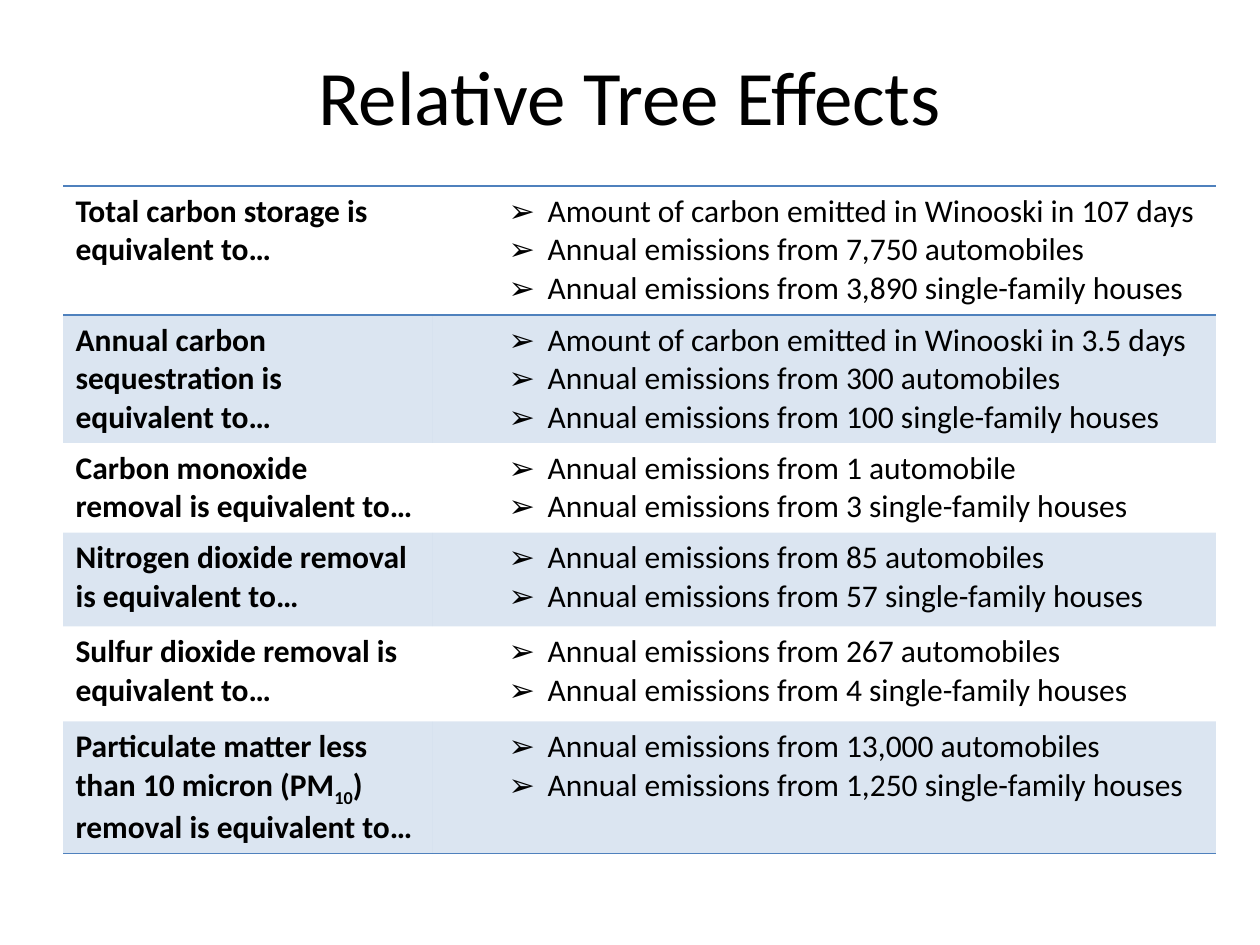
from dataclasses import dataclass

from lxml.etree import SubElement
from pptx import Presentation
from pptx.dml.color import RGBColor
from pptx.enum.text import MSO_ANCHOR, PP_ALIGN
from pptx.oxml import parse_xml
from pptx.oxml.ns import nsdecls, qn
from pptx.util import Pt

EMU_PER_PX = 914400 / 126
PLAIN_TABLE_STYLE = "{2D5ABB26-0587-4C30-8999-92F81FD0307C}"


@dataclass(frozen=True)
class Theme:
    font: str = "Calibri"
    text: str = "000000"
    accent: str = "4F81BD"
    band_opacity: int = 20
    title_size: int = 44
    body_size: int = 18
    rule_width: int = 1


THEME = Theme()

COLUMN_WIDTHS = (370, 783)
ROW_HEIGHTS = (129, 128, 89, 94, 95, 132)
BULLET_INDENT = 102
BULLET_HANG = 39

EFFECTS = [
    (
        ["Total carbon storage is equivalent to…"],
        [
            "Amount of carbon emitted in Winooski in 107 days",
            "Annual emissions from 7,750 automobiles",
            "Annual emissions from 3,890 single-family houses",
        ],
    ),
    (
        ["Annual carbon sequestration is equivalent to…"],
        [
            "Amount of carbon emitted in Winooski in 3.5 days",
            "Annual emissions from 300 automobiles",
            "Annual emissions from 100 single-family houses",
        ],
    ),
    (
        ["Carbon monoxide removal is equivalent to…"],
        [
            "Annual emissions from 1 automobile",
            "Annual emissions from 3 single-family houses",
        ],
    ),
    (
        ["Nitrogen dioxide removal is equivalent to…"],
        [
            "Annual emissions from 85 automobiles",
            "Annual emissions from 57 single-family houses",
        ],
    ),
    (
        ["Sulfur dioxide removal is equivalent to…"],
        [
            "Annual emissions from 267 automobiles",
            "Annual emissions from 4 single-family houses",
        ],
    ),
    (
        ["Particulate matter less than 10 micron (PM", "10", ") removal is equivalent to…"],
        [
            "Annual emissions from 13,000 automobiles",
            "Annual emissions from 1,250 single-family houses",
        ],
    ),
]


def px(length):
    return round(length * EMU_PER_PX)


def add_span(para, text, size, bold=False):
    span = para.add_run()
    span.text = text
    span.font.name = THEME.font
    span.font.size = Pt(size)
    span.font.bold = bold
    span.font.color.rgb = RGBColor.from_string(THEME.text)
    return span


def add_bullet(para):
    para.level = 1
    properties = para._p.get_or_add_pPr()
    properties.set("marL", str(px(BULLET_INDENT)))
    properties.set("indent", str(-px(BULLET_HANG)))
    SubElement(properties, qn("a:buFont")).set("typeface", "Arial")
    SubElement(properties, qn("a:buChar")).set("char", "➢")


def add_rules(cell, sides):
    properties = cell._tc.get_or_add_tcPr()
    for position, side in enumerate(sides):
        rule = parse_xml(
            f'<a:ln{side} {nsdecls("a")} w="{Pt(THEME.rule_width)}">'
            f'<a:solidFill><a:srgbClr val="{THEME.accent}"/></a:solidFill></a:ln{side}>'
        )
        properties.insert(position, rule)


def fill_cell(cell, banded):
    if not banded:
        cell.fill.background()
        return
    cell.fill.solid()
    cell.fill.fore_color.rgb = RGBColor.from_string(THEME.accent)
    color = cell._tc.tcPr.find(".//" + qn("a:srgbClr"))
    SubElement(color, qn("a:alpha")).set("val", str(THEME.band_opacity * 1000))


def write_topic(cell, parts):
    para = cell.text_frame.paragraphs[0]
    for index, part in enumerate(parts):
        span = add_span(para, part, THEME.body_size, bold=True)
        if index % 2:
            span.font._element.set("baseline", "-25000")


def write_equivalents(cell, equivalents):
    frame = cell.text_frame
    for index, equivalent in enumerate(equivalents):
        para = frame.add_paragraph() if index else frame.paragraphs[0]
        add_bullet(para)
        add_span(para, equivalent, THEME.body_size)


def place_title(slide, box, text):
    title = slide.shapes.title
    title.left, title.top, title.width, title.height = map(px, box)
    frame = title.text_frame
    frame.vertical_anchor = MSO_ANCHOR.MIDDLE
    para = frame.paragraphs[0]
    para.alignment = PP_ALIGN.CENTER
    add_span(para, text, THEME.title_size)


def place_effects_table(slide, box):
    frame = slide.shapes.add_table(len(EFFECTS), len(COLUMN_WIDTHS), *map(px, box))
    table = frame.table
    table.first_row = False
    table.horz_banding = False
    table._tbl.tblPr.find(qn("a:tableStyleId")).text = PLAIN_TABLE_STYLE
    for column, width in zip(table.columns, COLUMN_WIDTHS):
        column.width = px(width)
    rules = {0: "TB", len(EFFECTS) - 1: "B"}
    for index, (topic, equivalents) in enumerate(EFFECTS):
        row = table.rows[index]
        row.height = px(ROW_HEIGHTS[index])
        topic_cell, equivalents_cell = row.cells
        write_topic(topic_cell, topic)
        write_equivalents(equivalents_cell, equivalents)
        for cell in (topic_cell, equivalents_cell):
            fill_cell(cell, index % 2 == 1)
            add_rules(cell, rules.get(index, ""))


def main():
    deck = Presentation()
    deck.slide_width, deck.slide_height = px(1260), px(945)
    slide = deck.slides.add_slide(deck.slide_layouts[5])
    place_title(slide, (63, 38, 1134, 113), "Relative Tree Effects")
    place_effects_table(slide, (63, 186, sum(COLUMN_WIDTHS), sum(ROW_HEIGHTS)))
    deck.save("out.pptx")


if __name__ == "__main__":
    main()
